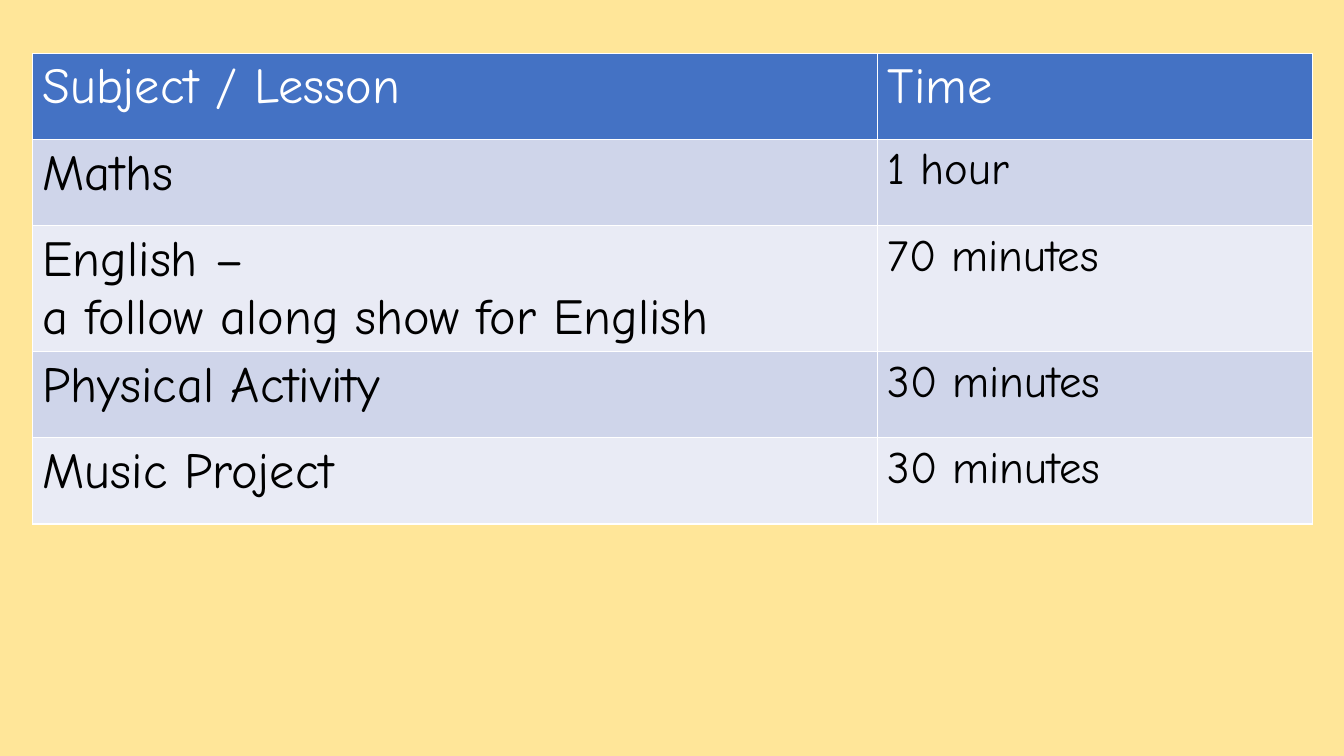
from pptx import Presentation
from pptx import util as u
from pptx.dml.color import RGBColor

PX = 9525  # EMU per px, 96 px to the inch
FONT = "Comic Neue"
SAND = RGBColor(0xFF, 0xE6, 0x99)
BLUE = RGBColor(0x44, 0x72, 0xC4)
BAND_DARK = RGBColor(0xCF, 0xD5, 0xEA)
BAND_LIGHT = RGBColor(0xE9, 0xEB, 0xF5)
WHITE = RGBColor(0xFF, 0xFF, 0xFF)
BLACK = RGBColor(0x00, 0x00, 0x00)

COLUMN_WIDTHS = [805, 414]
ROW_HEIGHT = 82
TIMETABLE = [
    ("Subject / Lesson", "Time"),
    ("Maths", "1 hour"),
    ("English –\na follow along show for English", "70 minutes"),
    ("Physical Activity", "30 minutes"),
    ("Music Project", "30 minutes"),
]


def px(length):
    return u.Emu(length * PX)


def write_text(frame, text, size=36, color=BLACK, bold=False):
    """Write one paragraph per line of text."""
    for index, line in enumerate(text.split("\n")):
        para = frame.paragraphs[0] if index == 0 else frame.add_paragraph()
        span = para.add_run()
        span.text = line
        span.font.name = FONT
        span.font.size = u.Pt(size)
        span.font.bold = bold
        span.font.color.rgb = color


def fill_cell(cell, color):
    cell.fill.solid()
    cell.fill.fore_color.rgb = color


def add_timetable(page, left, top):
    frame = page.shapes.add_table(
        len(TIMETABLE), len(COLUMN_WIDTHS), px(left), px(top),
        px(sum(COLUMN_WIDTHS)), px(ROW_HEIGHT * len(TIMETABLE)))
    table = frame.table
    for column, width in zip(table.columns, COLUMN_WIDTHS):
        column.width = px(width)

    for row, entries in enumerate(TIMETABLE):
        header = row == 0
        band = BLUE if header else (BAND_DARK if row % 2 else BAND_LIGHT)
        for col, text in enumerate(entries):
            cell = table.cell(row, col)
            fill_cell(cell, band)
            write_text(cell.text_frame, text,
                       size=36 if header or col == 0 else 32,
                       color=WHITE if header else BLACK)


def main():
    deck = Presentation()
    deck.slide_width, deck.slide_height = px(1280), px(720)

    # Blank page with a sand background
    page = deck.slides.add_slide(deck.slide_layouts[6])
    page.background.fill.solid()
    page.background.fill.fore_color.rgb = SAND

    # Lessons and their lengths
    add_timetable(page, left=31, top=51)
    deck.save("out.pptx")


if __name__ == "__main__":
    main()
